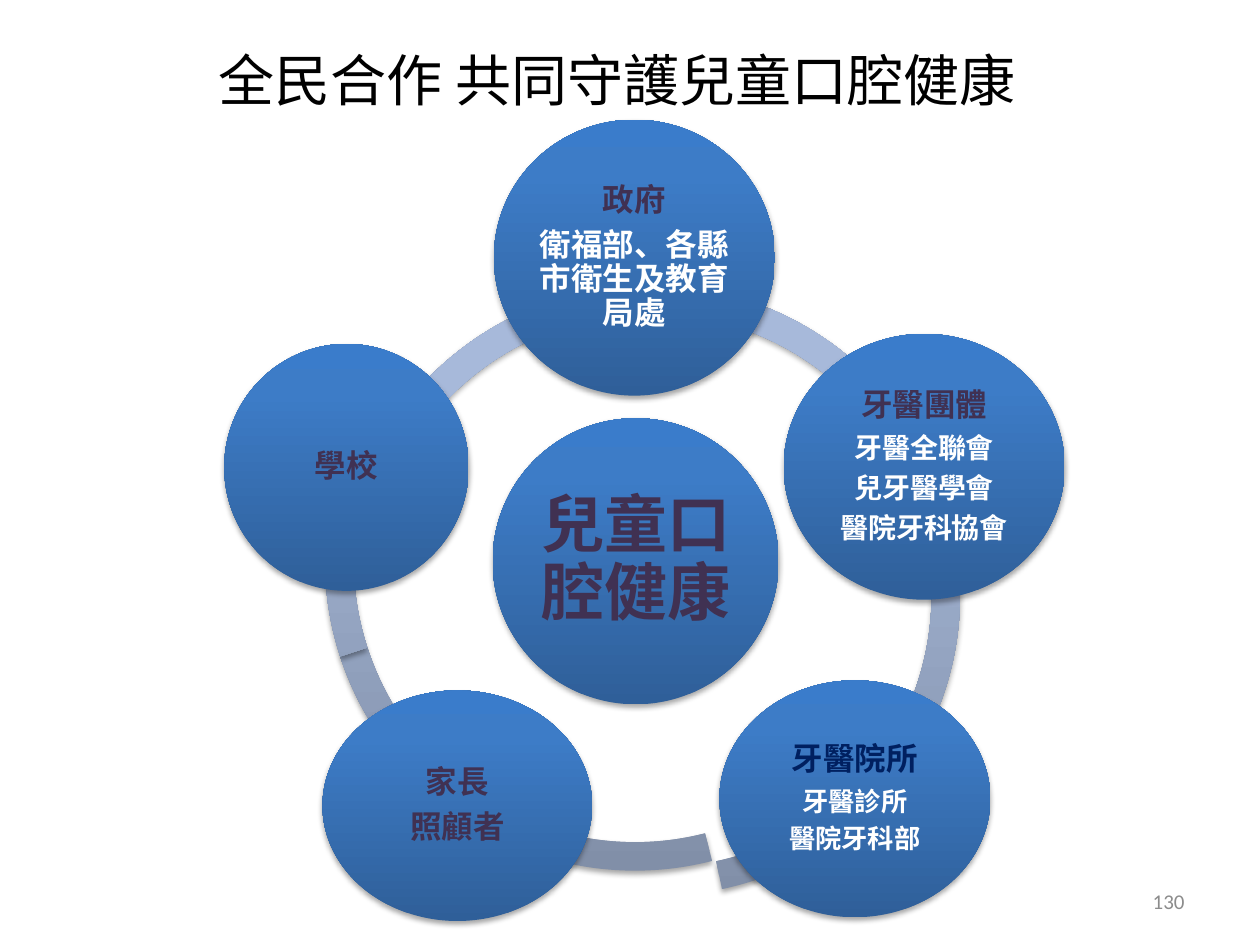
from dataclasses import dataclass

import pptx
import pptx.dml.color
import pptx.enum.shapes
import pptx.enum.text
import pptx.oxml
import pptx.oxml.ns
import pptx.util
from pptx.util import Inches

FONT = "Calibri"
COLORS = {
    "plum": "403152",
    "navy": "002060",
    "white": "FFFFFF",
    "black": "000000",
    "gray": "8C8C8C",
}
RING_STOPS = ((0, "818FA8"), (80, "A7B9DA"), (100, "A7BADC"))
CIRCLE_STOPS = ((0, "2F5F99"), (80, "3D7CC7"), (100, "3A7CCB"))
RING_SIZE = 4.92
RING_RATIO = 0.046
ALIGN = pptx.enum.text.PP_ALIGN
SHAPE = pptx.enum.shapes.MSO_SHAPE


@dataclass
class Line:
    text: str
    size: float = 18
    color: str = "plum"
    bold: bool = True


@dataclass
class Arc:
    left: float
    top: float
    start: float
    end: float


@dataclass
class Circle:
    left: float
    top: float
    width: float
    height: float
    lines: list[Line]
    inset: float = 0.03
    align: int = ALIGN.CENTER


ARCS = [
    Arc(2.58, 1.99, 118.8, 162),
    Arc(2.58, 1.99, 75.6, 118.8),
    Arc(2.76, 2.19, 28.81, 78.02),
    Arc(2.7, 2.26, 202.6, 27.43),
    Arc(2.58, 1.99, 162, 205.2),
]

CIRCLES = [
    Circle(3.91, 3.32, 2.27, 2.27, [Line("兒童口腔健康", 36)], 0.05, ALIGN.RIGHT),
    Circle(3.92, 0.95, 2.23, 2.19, [
        Line("政府"),
        Line("衛福部、各縣市衛生及教育局處", color="white"),
    ]),
    Circle(6.22, 2.65, 2.23, 2.11, [
        Line("牙醫團體"),
        Line("牙醫全聯會", 16, "white"),
        Line("兒牙醫學會", 16, "white"),
        Line("醫院牙科協會", 16, "white"),
    ], 0.02),
    Circle(5.71, 5.4, 2.15, 1.88, [
        Line("牙醫院所", color="navy"),
        Line("牙醫診所", 15, "white"),
        Line("醫院牙科部", 15, "white"),
    ]),
    Circle(2.56, 5.48, 2.14, 1.83, [Line("家長"), Line("照顧者")]),
    Circle(1.78, 2.73, 1.94, 1.96, [Line("學校")]),
]


def add_styled_shape(slide, kind, left: float, top: float, width: float,
                     height: float, stops: tuple):
    s = slide.shapes.add_shape(
        kind, Inches(left), Inches(top), Inches(width), Inches(height))
    s.fill.gradient()
    s.fill.gradient_angle = 90
    ns = pptx.oxml.ns.nsdecls("a")
    gs = "".join(
        f'<a:gs pos="{pos * 1000}"><a:srgbClr val="{color}"/></a:gs>'
        for pos, color in stops)
    old = s._element.spPr.find(".//" + pptx.oxml.ns.qn("a:gsLst"))
    old.getparent().replace(
        old, pptx.oxml.parse_xml(f"<a:gsLst {ns}>{gs}</a:gsLst>"))
    s.line.fill.background()
    s.shadow.inherit = False
    effects = s._element.spPr.find(pptx.oxml.ns.qn("a:effectLst"))
    effects.append(pptx.oxml.parse_xml(
        f'<a:outerShdw {ns} blurRad="40000" dist="23000" dir="5400000" '
        'rotWithShape="0"><a:srgbClr val="000000"><a:alpha val="35000"/>'
        "</a:srgbClr></a:outerShdw>"))
    return s


def add_run(p, line: Line) -> None:
    r = p.add_run()
    r.text = line.text
    r.font.name = FONT
    r.font.size = pptx.util.Pt(line.size)
    r.font.bold = line.bold
    r.font.color.rgb = pptx.dml.color.RGBColor.from_string(COLORS[line.color])


def add_arc(slide, arc: Arc) -> None:
    s = add_styled_shape(slide, SHAPE.BLOCK_ARC, arc.left, arc.top,
                         RING_SIZE, RING_SIZE, RING_STOPS)
    s.adjustments[0] = arc.start * 0.6
    s.adjustments[1] = arc.end * 0.6
    s.adjustments[2] = RING_RATIO


def add_circle(slide, circle: Circle) -> None:
    s = add_styled_shape(slide, SHAPE.OVAL, circle.left, circle.top,
                         circle.width, circle.height, CIRCLE_STOPS)
    tf = s.text_frame
    tf.word_wrap = True
    tf.vertical_anchor = pptx.enum.text.MSO_ANCHOR.MIDDLE
    tf.margin_left = tf.margin_right = Inches(circle.inset)
    tf.margin_top = tf.margin_bottom = Inches(circle.inset)
    for i, line in enumerate(circle.lines):
        p = tf.add_paragraph() if i else tf.paragraphs[0]
        p.alignment = circle.align
        p.line_spacing = 0.9
        p.space_after = pptx.util.Pt(line.size * 0.35)
        add_run(p, line)


def add_label(slide, left: float, top: float, width: float, height: float,
              line: Line, align: int) -> None:
    s = slide.shapes.add_textbox(
        Inches(left), Inches(top), Inches(width), Inches(height))
    tf = s.text_frame
    tf.word_wrap = True
    tf.vertical_anchor = pptx.enum.text.MSO_ANCHOR.MIDDLE
    p = tf.paragraphs[0]
    p.alignment = align
    add_run(p, line)


def main() -> None:
    prs = pptx.Presentation()
    prs.slide_width = Inches(10)
    prs.slide_height = Inches(7.5)
    slide = prs.slides.add_slide(prs.slide_layouts[6])
    for arc in ARCS:
        add_arc(slide, arc)
    for circle in CIRCLES:
        add_circle(slide, circle)
    add_label(slide, 0.28, 0, 9.24, 1.25,
              Line("全民合作 共同守護兒童口腔健康", 32, "black", False), ALIGN.CENTER)
    add_label(slide, 7.17, 6.95, 2.33, 0.4,
              Line("130", 12, "gray", False), ALIGN.RIGHT)
    prs.save("out.pptx")


if __name__ == "__main__":
    main()
